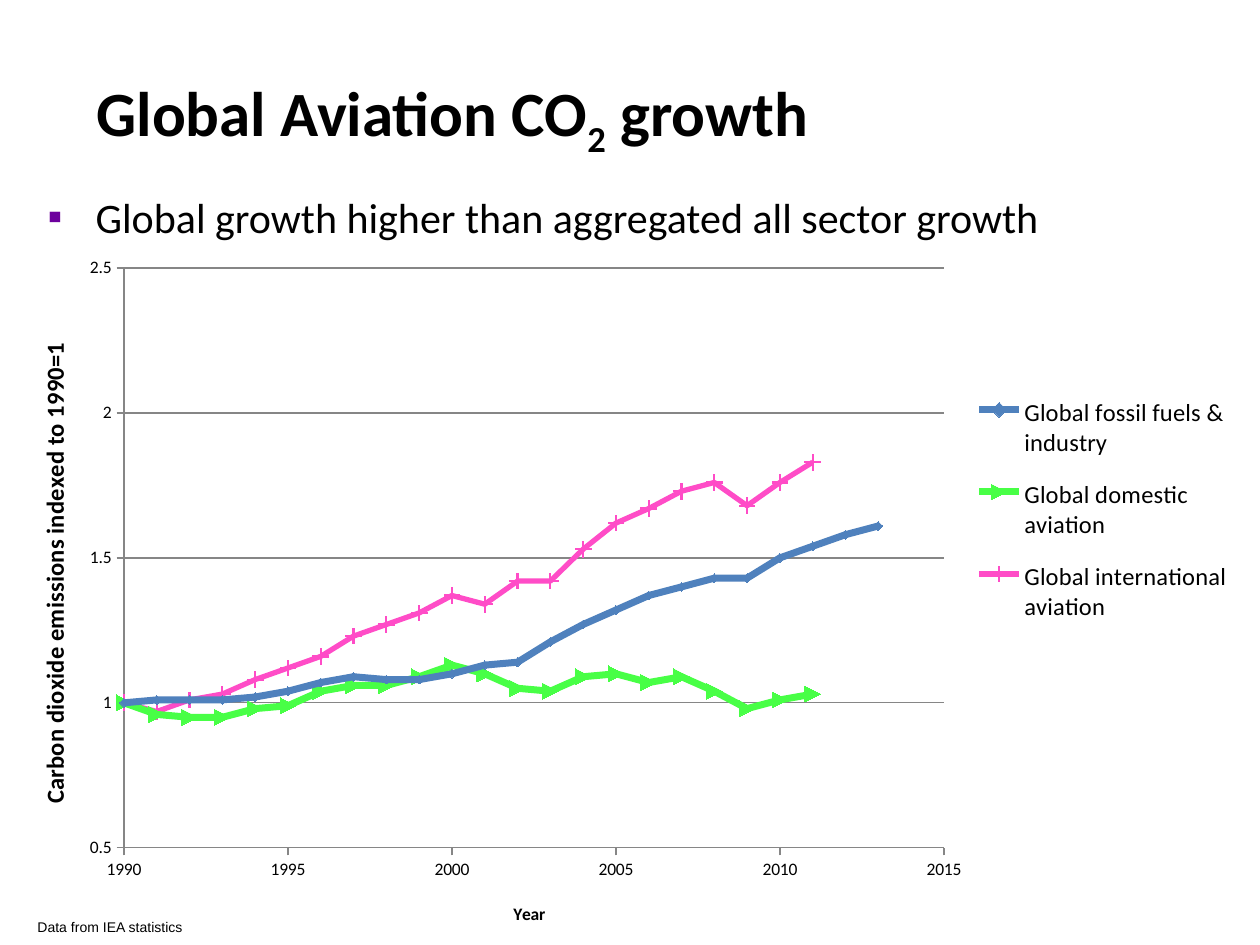
from lxml.etree import SubElement
from pptx import Presentation
from pptx.chart.data import XyChartData
from pptx.dml.color import RGBColor
from pptx.enum.chart import (XL_AXIS_CROSSES, XL_CHART_TYPE, XL_LEGEND_POSITION,
                             XL_MARKER_STYLE, XL_TICK_MARK)
from pptx.enum.text import MSO_ANCHOR, MSO_AUTO_SIZE, PP_ALIGN
from pptx.oxml import parse_xml
from pptx.oxml.ns import nsdecls, qn
from pptx.util import Emu, Pt

PX = 914400 / 126
BLACK = RGBColor(0, 0, 0)
PURPLE = RGBColor(0x6D, 0x00, 0x9D)
BLUE = RGBColor(0x4F, 0x81, 0xBD)
GREEN = RGBColor(0x48, 0xFF, 0x46)
PINK = RGBColor(0xFF, 0x4C, 0xC7)
GREY = RGBColor(0x86, 0x86, 0x86)

TITLE = [("Global Aviation CO", False), ("2", True), (" growth", False)]
MESSAGE = "Global growth higher than aggregated all sector growth"
DATA_CREDIT = "Data from IEA statistics"
FIRST_YEAR, LAST_YEAR = 1990, 2015

# name, colour, line width, marker style, marker size, yearly values from 1990
EMISSIONS = [
    ("Global fossil fuels & industry", BLUE, 4, XL_MARKER_STYLE.DIAMOND, 5,
     [1, 1.01, 1.01, 1.01, 1.02, 1.04, 1.07, 1.09, 1.08, 1.08, 1.1, 1.13,
      1.14, 1.21, 1.27, 1.32, 1.37, 1.4, 1.43, 1.43, 1.5, 1.54, 1.58, 1.61]),
    ("Global domestic aviation", GREEN, 4, XL_MARKER_STYLE.DOT, 9,
     [1, 0.96, 0.95, 0.95, 0.98, 0.99, 1.04, 1.06, 1.06, 1.09, 1.13,
      1.1, 1.05, 1.04, 1.09, 1.1, 1.07, 1.09, 1.04, 0.98, 1.01, 1.03]),
    ("Global international aviation", PINK, 3, XL_MARKER_STYLE.PLUS, 9,
     [1, 0.97, 1.01, 1.03, 1.08, 1.12, 1.16, 1.23, 1.27, 1.31, 1.37,
      1.34, 1.42, 1.42, 1.53, 1.62, 1.67, 1.73, 1.76, 1.68, 1.76, 1.83]),
]

# Boxes in px: left, top, width, height
TITLE_BOX = (84, 38, 1091, 157)
MESSAGE_BOX = (35, 185, 1081, 149)
CHART_BOX = (0, 244, 1260, 701)
CREDIT_BOX = (25, 912, 173, 30)
PLOT_BOX = (124, 268, 820, 580)
LEGEND_BOX = (958, 376, 290, 268)
YEAR_TITLE_AT = (510, 899)
INDEX_TITLE_AT = (33, 338)


def emu(px):
    return Emu(round(px * PX))


def place(shape, box):
    shape.left, shape.top, shape.width, shape.height = map(emu, box)


def style(font, size, face="Calibri", bold=False):
    font.size, font.name, font.bold = Pt(size), face, bold
    font.color.rgb = BLACK


def fix_layout(element, index, box, inner=False):
    """Pin a chart part to a slide position, as fractions of the chart."""
    for old in element.findall(qn("c:layout")):
        element.remove(old)
    layout = parse_xml(f"<c:layout {nsdecls('c')}><c:manualLayout/></c:layout>")
    manual = layout[0]
    left, top, width, height = CHART_BOX
    fractions = [(box[0] - left) / width, (box[1] - top) / height]
    if len(box) == 4:
        fractions += [box[2] / width, box[3] / height]
    settings = [("layoutTarget", "inner")] if inner else []
    settings += [("xMode", "edge"), ("yMode", "edge")]
    settings += [(key, f"{part:.4f}") for key, part in zip("xywh", fractions)]
    for key, setting in settings:
        SubElement(manual, qn("c:" + key)).set("val", setting)
    element.insert(index, layout)


def format_axis(axis, low, high, step, label, size, label_at):
    axis.minimum_scale, axis.maximum_scale, axis.major_unit = low, high, step
    axis.major_tick_mark, axis.minor_tick_mark = XL_TICK_MARK.OUTSIDE, XL_TICK_MARK.NONE
    axis.crosses = XL_AXIS_CROSSES.MINIMUM
    axis.format.line.color.rgb = GREY
    axis.format.line.width = Pt(0.75)
    axis.tick_labels.number_format = "General"
    axis.tick_labels.number_format_is_linked = False
    style(axis.tick_labels.font, 10)
    axis.axis_title.text_frame.text = label
    style(axis.axis_title.text_frame.paragraphs[0].runs[0].font, size, bold=True)
    fix_layout(axis.axis_title._element, 1, label_at)


def add_title(slide):
    title = slide.shapes.title
    place(title, TITLE_BOX)
    title.text_frame.vertical_anchor = MSO_ANCHOR.MIDDLE
    paragraph = title.text_frame.paragraphs[0]
    paragraph.alignment = PP_ALIGN.LEFT
    for words, lowered in TITLE:
        run = paragraph.add_run()
        run.text = words
        style(run.font, 36, bold=True)
        if lowered:
            run.font._element.set("baseline", "-25000")


def add_message(slide):
    message = slide.placeholders[1]
    place(message, MESSAGE_BOX)
    message.text_frame.text = MESSAGE
    paragraph = message.text_frame.paragraphs[0]
    properties = paragraph._p.get_or_add_pPr()
    properties.set("marL", str(emu(48)))
    properties.set("indent", str(emu(-48)))
    colour = SubElement(properties, qn("a:buClr"))
    SubElement(colour, qn("a:srgbClr")).set("val", str(PURPLE))
    SubElement(properties, qn("a:buChar")).set("char", "▪")
    paragraph.space_before = Pt(0)
    style(paragraph.runs[0].font, 24)


def add_emissions_chart(slide):
    chart_data = XyChartData()
    for name, *_, values in EMISSIONS:
        points = chart_data.add_series(name)
        for year, value in enumerate(values, FIRST_YEAR):
            points.add_data_point(year, value)
    chart = slide.shapes.add_chart(XL_CHART_TYPE.XY_SCATTER_SMOOTH,
                                   *map(emu, CHART_BOX), chart_data).chart
    chart.has_title = False
    style(chart.font, 10)
    chart.plots[0].vary_by_categories = False
    for series, (_, colour, width, marker, size, _) in zip(chart.plots[0].series, EMISSIONS):
        series.smooth = True
        series.format.line.color.rgb = colour
        series.format.line.width = Pt(width)
        series.marker.style, series.marker.size = marker, size
        series.marker.format.fill.solid()
        series.marker.format.fill.fore_color.rgb = colour
        series.marker.format.line.color.rgb = colour

    years, index = chart.category_axis, chart.value_axis
    format_axis(years, FIRST_YEAR, LAST_YEAR, 5, "Year", 10, YEAR_TITLE_AT)
    format_axis(index, 0.5, 2.5, 0.5, "Carbon dioxide emissions indexed to 1990=1",
                14, INDEX_TITLE_AT)
    index.axis_title._element.find(".//" + qn("a:bodyPr")).set("rot", "-5400000")
    years.has_major_gridlines = False
    index.has_major_gridlines = True
    index.major_gridlines.format.line.color.rgb = GREY
    index.major_gridlines.format.line.width = Pt(0.75)

    chart.has_legend = True
    chart.legend.position = XL_LEGEND_POSITION.RIGHT
    chart.legend.include_in_layout = False
    style(chart.legend.font, 14)
    fix_layout(chart.legend._element, 1, LEGEND_BOX)
    fix_layout(chart._chartSpace.chart.plotArea, 0, PLOT_BOX, inner=True)


def add_credit(slide):
    credit = slide.shapes.add_textbox(*map(emu, CREDIT_BOX))
    credit.text_frame.word_wrap = False
    credit.text_frame.auto_size = MSO_AUTO_SIZE.SHAPE_TO_FIT_TEXT
    credit.text_frame.text = DATA_CREDIT
    style(credit.text_frame.paragraphs[0].runs[0].font, 8, "Arial")


def main():
    deck = Presentation()
    deck.slide_width, deck.slide_height = emu(1260), emu(945)
    slide = deck.slides.add_slide(deck.slide_layouts[1])
    add_title(slide)
    add_message(slide)
    add_emissions_chart(slide)
    add_credit(slide)
    deck.save("out.pptx")


if __name__ == "__main__":
    main()
